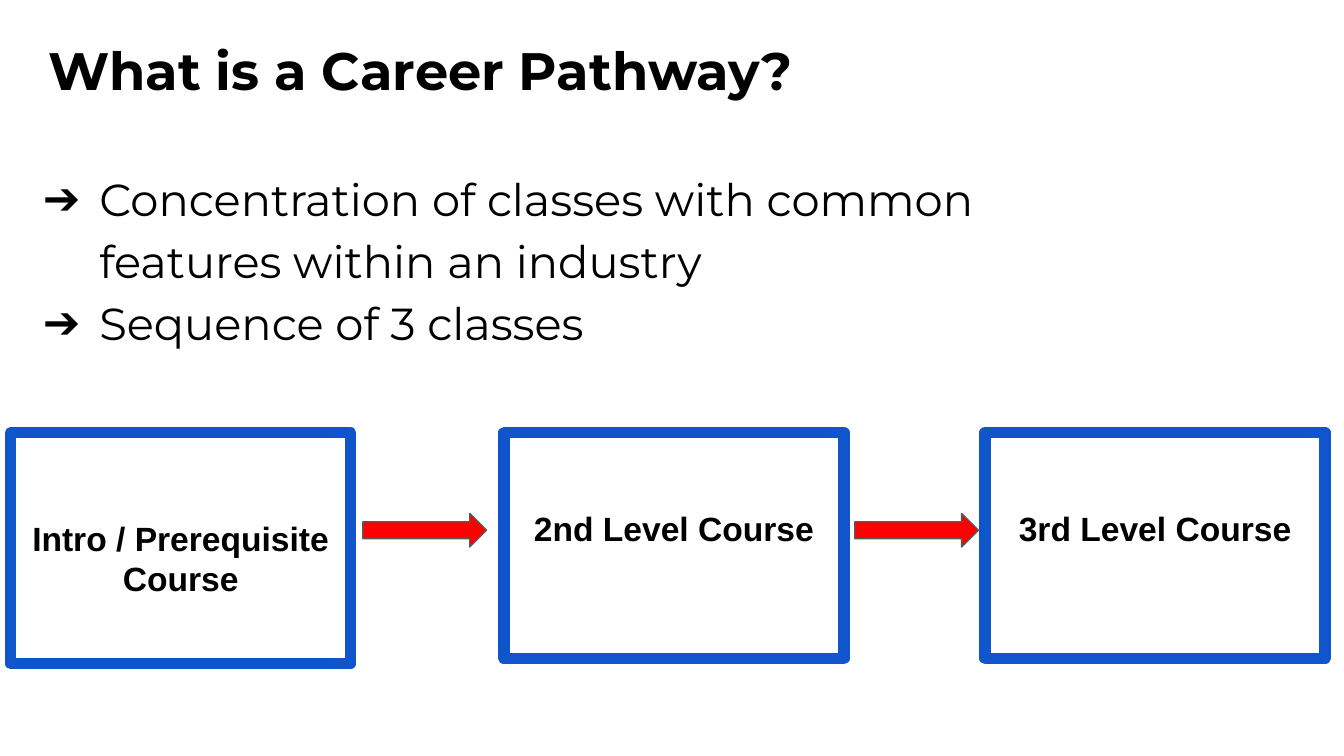
import pptx
import pptx.util
import pptx.dml.color
import pptx.enum.shapes
import pptx.enum.text
import pptx.oxml
import pptx.oxml.ns
from lxml import etree

Inches, Pt = pptx.util.Inches, pptx.util.Pt
SHAPE = pptx.enum.shapes.MSO_SHAPE

TITLE = "What is a Career Pathway?"
BULLETS = [
    "Concentration of classes with common features within an industry",
    "Sequence of 3 classes",
]
# text, left, height, top inset
COURSES = [
    ("Intro / Prerequisite Course", 0.08, 1.72, 0.63),
    ("2nd Level Course", 3.75, 1.68, 0.56),
    ("3rd Level Course", 7.33, 1.68, 0.56),
]
ARROW_LEFTS = [2.7, 6.36]
COLORS = {"text": "000000", "frame": "1155CC", "arrow": "FF0000", "edge": "595959"}


def rgb(name):
    return pptx.dml.color.RGBColor.from_string(COLORS[name])


def set_font(p, name, size, bold=False):
    p.font.name, p.font.size, p.font.bold = name, Pt(size), bold
    p.font.color.rgb = rgb("text")


def prepare_frame(tf):
    tf.word_wrap = True
    tf.vertical_anchor = pptx.enum.text.MSO_ANCHOR.TOP
    tf.margin_left = tf.margin_right = tf.margin_top = tf.margin_bottom = Inches(0.1)
    return tf


def add_text(s, left, top, width, height):
    box = s.shapes.add_textbox(Inches(left), Inches(top), Inches(width), Inches(height))
    return prepare_frame(box.text_frame)


def add_bullet(p):
    """Give the paragraph an arrow bullet with a hanging indent."""
    pPr = p._p.get_or_add_pPr()
    pPr.set("marL", str(Inches(0.5)))
    pPr.set("indent", str(Inches(-0.42)))
    for tag, attrs in (("a:buFont", {"typeface": "Montserrat"}), ("a:buChar", {"char": "➔"})):
        bullet = etree.Element(pptx.oxml.ns.qn(tag), attrs)
        pPr.insert_element_before(bullet, "a:tabLst", "a:defRPr", "a:extLst")


def add_outlined(s, kind, left, top, width, height, line, weight):
    shape = s.shapes.add_shape(
        kind, Inches(left), Inches(top), Inches(width), Inches(height))
    shape.shadow.inherit = False
    shape.line.color.rgb = rgb(line)
    shape.line.width = Pt(weight)
    return shape


prs = pptx.Presentation()
prs.slide_width = Inches(10)
prs.slide_height = prs.slide_width * 9 // 16
s = prs.slides.add_slide(prs.slide_layouts[6])

p = add_text(s, 0.26, 0.18, 9.32, 0.63).paragraphs[0]
p.text = TITLE
set_font(p, "Montserrat", 28.2, bold=True)

tf = add_text(s, 0.14, 1.12, 8.48, 1.52)
for i, text in enumerate(BULLETS):
    p = tf.add_paragraph() if i else tf.paragraphs[0]
    p.text = text
    p.line_spacing = 1.15
    set_font(p, "Montserrat", 24)
    add_bullet(p)

for text, left, height, inset in COURSES:
    box = add_outlined(s, SHAPE.RECTANGLE, left, 3.22, 2.53, height, "frame", 6)
    box.fill.background()
    tf = prepare_frame(box.text_frame)
    tf.margin_top = Inches(inset)
    p = tf.paragraphs[0]
    p.text = text
    p.alignment = pptx.enum.text.PP_ALIGN.CENTER
    set_font(p, "Arial", 18, bold=True)

for left in ARROW_LEFTS:
    arrow = add_outlined(s, SHAPE.RIGHT_ARROW, left, 3.82, 0.92, 0.25, "edge", 0.75)
    arrow.fill.solid()
    arrow.fill.fore_color.rgb = rgb("arrow")

prs.save("out.pptx")
